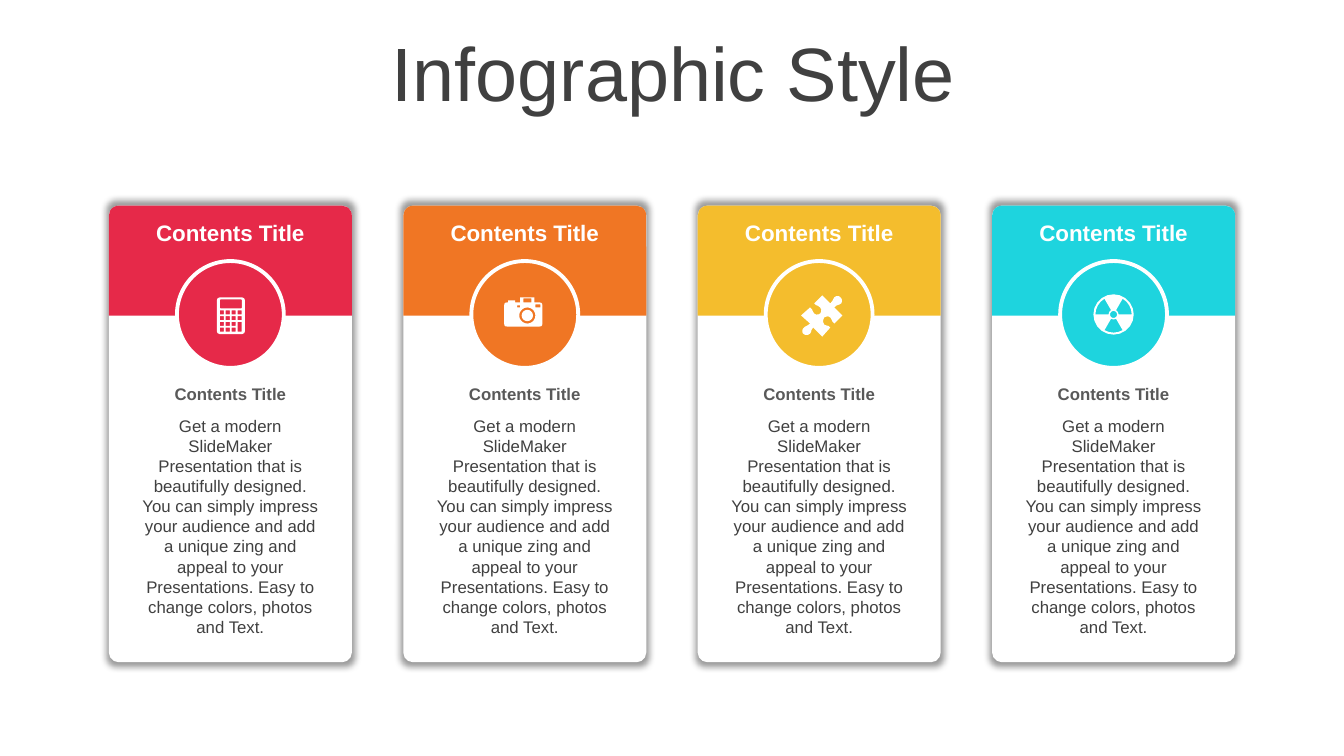
from math import cos, sin, radians
from lxml.etree import fromstring
from pptx import Presentation
from pptx.dml.color import RGBColor as Rgb
from pptx.enum.shapes import MSO_SHAPE as Kind
from pptx.enum.text import MSO_ANCHOR as Anchor, PP_ALIGN as Align
from pptx.oxml.ns import qn
from pptx.util import Inches, Pt


def paint(fill, tint):
    fill.solid()
    fill.fore_color.rgb = Rgb.from_string(tint)


def write(box, text, size, tint, bold=False, side=0.1, anchor=Anchor.TOP, lead=1.0):
    frame = box.text_frame
    frame.word_wrap = True
    frame.vertical_anchor = anchor
    frame.margin_left = frame.margin_right = Inches(side)
    frame.margin_top = frame.margin_bottom = Inches(0.05)
    para = frame.paragraphs[0]
    para.alignment = Align.CENTER
    para.line_spacing = lead
    para.space_before = Pt(0)
    run = para.add_run()
    run.text = text
    run.font.name = "Arial"
    run.font.size = Pt(size)
    run.font.bold = bold
    paint(run.font.fill, tint)


WIDE, HIGH = 13.33, 7.5
EDGE, TOP = 1.08, 2.04
CARD_W, CARD_H, HEAD_H = 2.41, 4.53, 1.09
TEXT_W, DISC = 1.97, 1.06
TINTS = ["E62949", "F07624", "F4BD2D", "1ED4DE"]
STEP = (WIDE - 2 * EDGE - CARD_W) / (len(TINTS) - 1)
BODY = (
    "Get a modern SlideMaker Presentation that is beautifully designed. "
    "You can simply impress your audience and add a unique zing and appeal "
    "to your Presentations. Easy to change colors, photos and Text."
)
GLOW = (
    '<a:outerShdw xmlns:a="http://schemas.openxmlformats.org/drawingml/2006/main" '
    'blurRad="63500" sx="102000" sy="102000" algn="ctr" rotWithShape="0">'
    '<a:srgbClr val="000000"><a:alpha val="40000"/></a:srgbClr></a:outerShdw>'
)

keys = [
    (-10.5 + 5.9 * col, -4 + 5.7 * row, 4, 9.7 if (col, row) == (3, 2) else 4, 0)
    for row in range(4)
    for col in range(4)
    if (col, row) != (3, 3)
]
camera = [
    (-17.5, -12), (-16.5, -12), (-16.5, -14), (-9.5, -14), (-9.5, -12),
    (-4.5, -12), (-4.5, -17), (9.5, -17), (9.5, -12), (14.5, -12),
    (16.5, -12, 17.5, -11, 17.5, -9), (17.5, 9),
    (17.5, 11, 16.5, 12, 14.5, 12), (-17.5, 12),
    (-19.5, 12, -20.5, 11, -20.5, 9), (-20.5, -9),
    (-20.5, -11, -19.5, -12, -17.5, -12),
]
puzzle = [
    (21, -17), (23, -16, 23, -13, 22, -11), (20, -9, 17, -10, 15, -7),
    (23, 1), (15, 9), (12, 7, 13, 5, 11, 3), (9, 1, 7, 2, 5, 3),
    (4, 5, 3, 7, 5, 10), (8, 12, 9, 10, 11, 13), (3, 22), (-6, 13),
    (-9, 16, -7, 17, -9, 19), (-11, 21, -14, 21, -16, 19),
    (-17, 18, -17, 15, -16, 14), (-14, 11, -12, 12, -9, 9),
    (-18, 1), (-9, -7), (-6, -5, -7, -3, -5, -1), (-3, 1, 0, 0, 1, -1),
    (2, -2, 3, -5, 1, -7), (-2, -10, -3, -8, -5, -11), (3, -19), (11, -11),
    (14, -14, 13, -14, 15, -17), (17, -19, 20, -19, 21, -17),
]
wedges = [
    [
        (r * cos(radians(turn + a)), r * sin(radians(turn + a)))
        for r, sweep in [(18, (0, 15, 30, 45, 60)), (5, (60, 30, 0))]
        for a in sweep
    ]
    for turn in (60, 180, 300)
]
lens = [
    (-5.5, -7, 16, 16, 8), (-3.1, -4.6, 11.2, 11.2, 5.6),
    (-7.5, -9, 3, 2, 0), (10.5, -10, 5, 3, 0), (-1.5, -16, 8, 4, 0),
]
ICONS = [
    ([(-13.5, -17, 28, 36.5, 3), (-10.5, -15, 22, 9, 1)] + keys, []),
    (lens, [camera]),
    ([], [puzzle]),
    ([(-20, -20, 40, 40, 20), (-3.5, -3.5, 7, 7, 3.5)], wedges),
]

deck = Presentation()
deck.slide_width, deck.slide_height = Inches(WIDE), Inches(HIGH)
slide = deck.slides.add_slide(deck.slide_layouts[5])
shapes = slide.shapes

title = shapes.title
title.left, title.top = Inches(0.35), Inches(0.37)
title.width, title.height = Inches(12.66), Inches(0.79)
write(title, "Infographic Style", 54, "404040", anchor=Anchor.MIDDLE, lead=0.9)

for col, (tint, (boxes, paths)) in enumerate(zip(TINTS, ICONS)):
    left = EDGE + col * STEP
    mid = left + CARD_W / 2
    parts = [
        (Kind.ROUNDED_RECTANGLE, left, TOP, CARD_W, CARD_H, "FFFFFF"),
        (Kind.ROUND_2_SAME_RECTANGLE, left, TOP, CARD_W, HEAD_H, tint),
        (Kind.OVAL, mid - DISC / 2, 2.59, DISC, DISC, tint),
    ]
    made = []
    for kind, x, y, w, h, fill in parts:
        part = shapes.add_shape(kind, Inches(x), Inches(y), Inches(w), Inches(h))
        part.shadow.inherit = False
        paint(part.fill, fill)
        part.line.fill.background()
        made.append(part)
    card, head, disc = made
    card.adjustments[0] = 0.04
    card._element.spPr.find(qn("a:effectLst")).append(fromstring(GLOW))
    head.adjustments[0] = 0.09
    paint(disc.line.fill, "FFFFFF")
    disc.line.width = Pt(2.75)

    rings = []
    for x, y, w, h, r in boxes:
        hubs = [(x + w - r, y + h - r), (x + r, y + h - r), (x + r, y + r), (x + w - r, y + r)]
        sweep = range(0, 90, 18) if r > 3 else (0, 45, 90) if r else (0,)
        rings.append([
            (hx + r * cos(radians(90 * turn + a)), hy + r * sin(radians(90 * turn + a)))
            for turn, (hx, hy) in enumerate(hubs)
            for a in sweep
        ])
    for path in paths:
        ring = []
        for node in path:
            if len(node) == 2:
                ring.append(node)
                continue
            ends = [ring[-1], node[:2], node[2:4], node[4:]]
            for t in (0.33, 0.67, 1):
                mix = [(1 - t) ** 3, 3 * t * (1 - t) ** 2, 3 * t * t * (1 - t), t ** 3]
                ring.append(tuple(sum(m * e[k] for m, e in zip(mix, ends)) for k in (0, 1)))
        rings.append(ring)
    rings = [[(round(x * 100), round(y * 100)) for x, y in ring] for ring in rings]
    pen = shapes.build_freeform(*rings[0][0], scale=Inches(1) / 10000)
    for k, ring in enumerate(rings):
        if k:
            pen.move_to(*ring[0])
        pen.add_line_segments(ring[1:], close=True)
    icon = pen.convert_to_shape(Inches(mid), Inches(2.59 + DISC / 2))
    icon.shadow.inherit = False
    paint(icon.fill, "FFFFFF")
    icon.line.fill.background()

    for y, h, text, size, ink, bold, side in [
        (2.12, 0.37, "Contents Title", 16, "FFFFFF", True, 0.12),
        (3.76, 0.3, "Contents Title", 12, "595959", True, 0.12),
        (4.07, 2.32, BODY, 12, "404040", False, 0.1),
    ]:
        box = shapes.add_textbox(Inches(mid - TEXT_W / 2), Inches(y), Inches(TEXT_W), Inches(h))
        write(box, text, size, ink, bold=bold, side=side)

deck.save("out.pptx")
